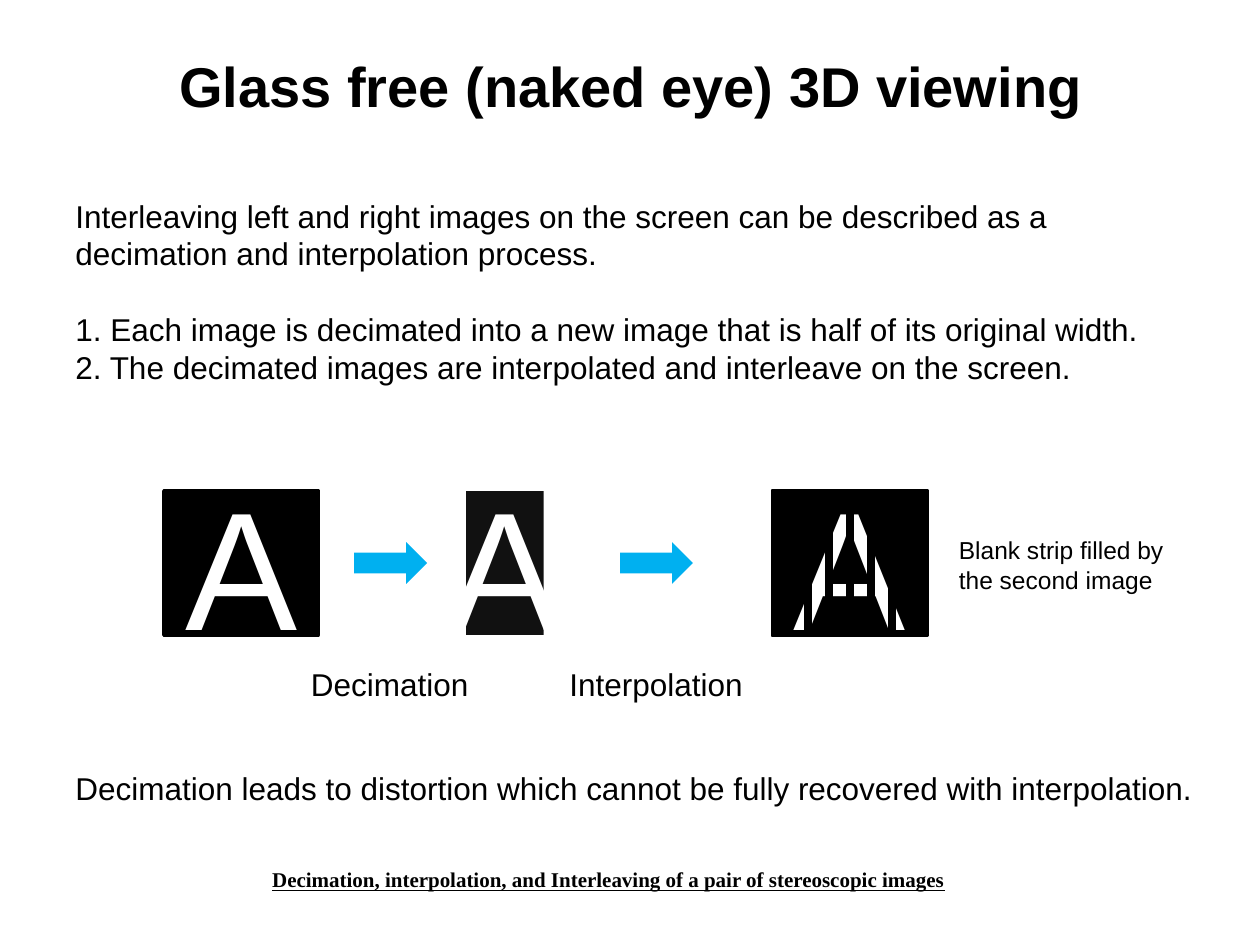
from lxml import etree
from pptx import Presentation
from pptx.dml.color import RGBColor
from pptx.enum import shapes, text
from pptx.oxml.ns import qn
from pptx.util import Cm, Pt

COLORS = {"ink": "000000", "letter": "FFFFFF", "decimated": "111111", "arrow": "00B0F0"}
SANS, SERIF = "Arial", "Times New Roman"

# Paragraphs, (left, top, width, height) in cm, size in points, other settings
TEXTS = [
    (["Glass free (naked eye) 3D viewing"], (3.3, 0.91, 18.85, 1.63), 32,
     dict(bold=True, centered=True, wrap=False)),
    (["Interleaving left and right images on the screen can be described as a "
      "decimation and interpolation process.",
      "1. Each image is decimated into a new image that is half of its original width.",
      "2. The decimated images are interpolated and interleave on the screen."],
     (1.27, 3.84, 22.3, 4.11), 18, dict(first_gap=21.5)),
    (["Decimation"], (6.02, 13.28, 3.71, 1.02), 18, dict(wrap=False)),
    (["Interpolation"], (11.23, 13.28, 4.04, 1.02), 18, dict(wrap=False)),
    (["Blank strip filled by the second image"], (19.08, 10.67, 4.75, 1.35), 14, {}),
    (["Decimation leads to distortion which cannot be fully recovered with interpolation."],
     (1.27, 15.37, 23.22, 1.02), 18, {}),
    (["Decimation, interpolation, and Interleaving of a pair of stereoscopic images"],
     (5.16, 17.35, 14.22, 0.76), 12,
     dict(font=SERIF, bold=True, underline=True, centered=True, wrap=False)),
]

TILE_TOP, TILE_WIDTH, TILE_HEIGHT = 9.9, 3.12, 2.9
SOURCE_LEFT, DECIMATED_LEFT, INTERLEAVED_LEFT = 3.3, 9.4, 15.57
ARROW_LEFTS, ARROW_WIDTH, ARROW_HEIGHT = (7.14, 12.5), 1.47, 0.84
STRIP_COUNT, STRIP_OFFSET, STRIP_PITCH = 5, 0.72, 0.425


def rgb(name):
    return RGBColor.from_string(COLORS[name])


def add_run(paragraph, words, size, color="ink", font=SANS, bold=False, underline=False):
    run = paragraph.add_run()
    run.text = words
    run.font.name, run.font.size = font, Pt(size)
    run.font.bold, run.font.underline = bold, underline
    run.font.color.rgb = rgb(color)


def add_text(slide, paragraphs, box, size, centered=False, wrap=True, first_gap=0, **style):
    frame = slide.shapes.add_textbox(*map(Cm, box)).text_frame
    frame.word_wrap = wrap
    for index, words in enumerate(paragraphs):
        paragraph = frame.add_paragraph() if index else frame.paragraphs[0]
        paragraph.alignment = text.PP_ALIGN.CENTER if centered else text.PP_ALIGN.LEFT
        if first_gap and index == 0:
            paragraph.space_after = Pt(first_gap)
        add_run(paragraph, words, size, **style)


def add_block(slide, kind, box, fill=None, line=None):
    block = slide.shapes.add_shape(kind, *map(Cm, box))
    block.shadow.inherit = False
    if fill:
        block.fill.solid()
        block.fill.fore_color.rgb = rgb(fill)
    else:
        block.fill.background()
    if line:
        block.line.color.rgb = rgb(line)
        block.line.width = Pt(2)
    else:
        block.line.fill.background()
    return block


def add_letter_tile(slide, left, width=TILE_WIDTH, fill="ink", line="ink"):
    tile = add_block(slide, shapes.MSO_SHAPE.RECTANGLE,
                     (left, TILE_TOP, width, TILE_HEIGHT), fill, line)
    frame = tile.text_frame
    frame.word_wrap = False
    frame.vertical_anchor = text.MSO_ANCHOR.MIDDLE
    letter = frame.paragraphs[0]
    letter.alignment = text.PP_ALIGN.CENTER
    add_run(letter, "A", 96, "letter")


def add_strip(slide, x):
    strip = slide.shapes.add_connector(
        shapes.MSO_CONNECTOR.STRAIGHT, Cm(x), Cm(TILE_TOP), Cm(x), Cm(TILE_TOP + TILE_HEIGHT))
    strip.line.color.rgb = rgb("ink")
    strip.line.width = Pt(4.5)
    etree.SubElement(strip._element.spPr, qn("a:effectLst"))


def main():
    deck = Presentation()
    deck.slide_width, deck.slide_height = Cm(25.4), Cm(19.05)
    slide = deck.slides.add_slide(deck.slide_layouts[6])

    add_letter_tile(slide, SOURCE_LEFT)
    add_letter_tile(slide, DECIMATED_LEFT, TILE_WIDTH / 2, "decimated", None)
    add_letter_tile(slide, INTERLEAVED_LEFT)
    for index in range(STRIP_COUNT):
        add_strip(slide, INTERLEAVED_LEFT + STRIP_OFFSET + index * STRIP_PITCH)
    add_block(slide, shapes.MSO_SHAPE.RECTANGLE,
              (INTERLEAVED_LEFT, TILE_TOP, TILE_WIDTH, TILE_HEIGHT), line="ink")

    arrow_top = TILE_TOP + (TILE_HEIGHT - ARROW_HEIGHT) / 2
    for left in ARROW_LEFTS:
        add_block(slide, shapes.MSO_SHAPE.RIGHT_ARROW,
                  (left, arrow_top, ARROW_WIDTH, ARROW_HEIGHT), "arrow")

    for paragraphs, box, size, settings in TEXTS:
        add_text(slide, paragraphs, box, size, **settings)

    deck.save("out.pptx")


if __name__ == "__main__":
    main()
